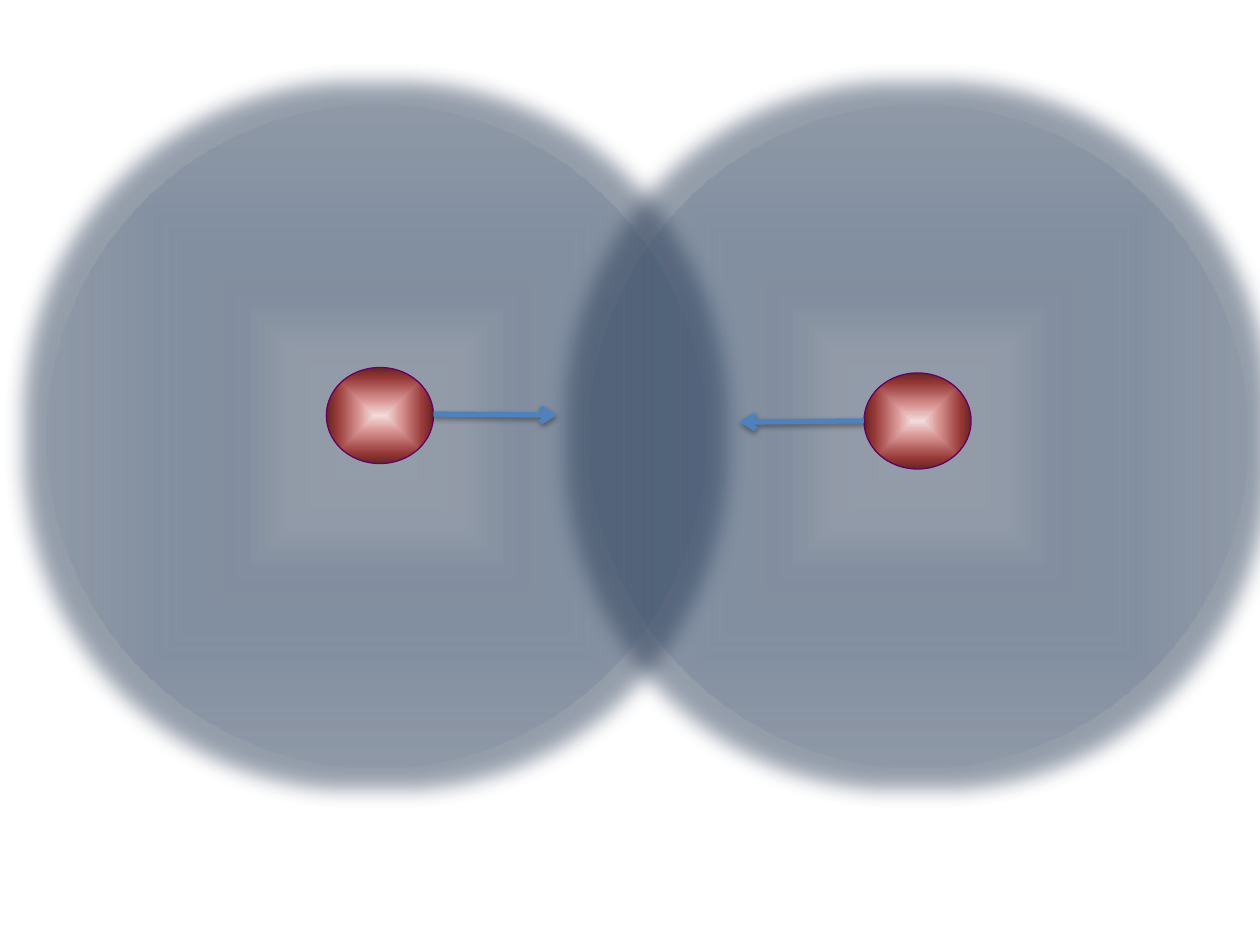
from pptx import Presentation
from pptx.dml.color import RGBColor
from pptx.enum.shapes import MSO_CONNECTOR, MSO_SHAPE
from pptx.oxml import parse_xml
from pptx.oxml.ns import nsdecls, qn
from pptx.util import Pt

CLOUD = [(0, "BFCDE8", 2), (25, "17375E", 1), (40, "17375E", 13),
         (60, "1C4270", 14), (100, "17375E", 3)]
CORE = [(0, "F2DCDB", 100), (16, "E6B9B8", 100), (31, "D99694", 100),
        (79, "953735", 100), (100, "632523", 100)]


def tint(code, alpha=100):
    """Return the colour XML for a hex string and an opacity in percent."""
    return f'<a:srgbClr val="{code}"><a:alpha val="{alpha * 1000}"/></a:srgbClr>'


def shade(shape, stops):
    """Fill a shape with a gradient that spreads from its centre."""
    marks = "".join(f'<a:gs pos="{pos * 1000}">{tint(code, alpha)}</a:gs>'
                    for pos, code, alpha in stops)
    shape.fill.background()
    props = shape._element.spPr
    props.replace(props.find(qn("a:noFill")), parse_xml(
        f'<a:gradFill {nsdecls("a")} rotWithShape="1"><a:gsLst>{marks}</a:gsLst>'
        '<a:path path="shape"><a:fillToRect l="50000" t="50000" r="50000" b="50000"/>'
        '</a:path></a:gradFill>'))


def add_ball(slide, left, top, width, height, stops):
    """Add a shaded ellipse without outline or shadow."""
    ball = slide.shapes.add_shape(MSO_SHAPE.OVAL, Pt(left), Pt(top), Pt(width), Pt(height))
    ball.shadow.inherit = False
    ball.line.fill.background()
    shade(ball, stops)
    return ball


def add_cloud(slide, left):
    """Add a large glowing electron cloud."""
    cloud = add_ball(slide, left, 59.8, 376.6, 378.7, CLOUD)
    cloud._element.spPr.find(qn("a:effectLst")).append(parse_xml(
        f'<a:glow {nsdecls("a")} rad="{Pt(25)}">{tint("293B55", 50)}</a:glow>'))


def add_core(slide, left, top):
    """Add a small outlined nucleus."""
    core = add_ball(slide, left, top, 61.2, 54.9, CORE)
    core.line.color.rgb = RGBColor.from_string("660066")
    core.line.width = Pt(0.75)


def add_arrow(slide, start, end):
    """Add a shadowed arrow between two points."""
    arrow = slide.shapes.add_connector(
        MSO_CONNECTOR.STRAIGHT, *(Pt(value) for value in start + end))
    arrow.line.color.rgb = RGBColor.from_string("4F81BD")
    arrow.line.width = Pt(3)
    arrow.line._get_or_add_ln().append(parse_xml(
        f'<a:tailEnd {nsdecls("a")} type="arrow"/>'))
    arrow._element.spPr.append(parse_xml(
        f'<a:effectLst {nsdecls("a")}><a:outerShdw blurRad="{Pt(3.15)}" '
        f'dist="{Pt(1.57)}" dir="5400000" rotWithShape="0">{tint("000000", 38)}'
        '</a:outerShdw></a:effectLst>'))


def main():
    """Build the slide with two overlapping atoms."""
    deck = Presentation()
    deck.slide_width, deck.slide_height = Pt(720), Pt(540)
    slide = deck.slides.add_slide(deck.slide_layouts[6])
    for left in (26.6, 336.2):
        add_cloud(slide, left)
    for left, top in ((186.5, 210), (493.7, 213.1)):
        add_core(slide, left, top)
    for start, end in (((247.7, 236.6), (318.2, 237.2)), ((493.7, 240.5), (422.6, 241.2))):
        add_arrow(slide, start, end)
    deck.save("out.pptx")


if __name__ == "__main__":
    main()
